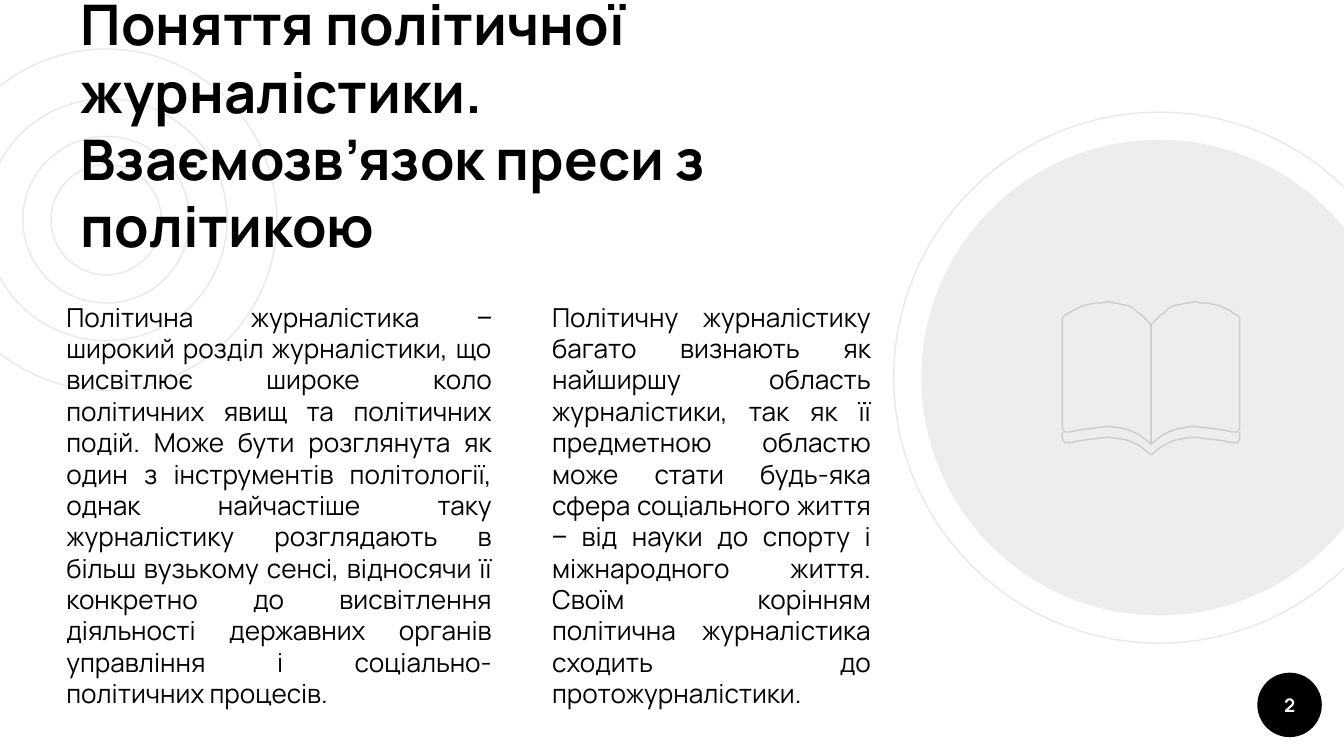
import pptx
import pptx.dml.color
import pptx.enum.shapes
import pptx.enum.text
import pptx.oxml.ns
import pptx.util
from lxml import etree

PX = 4572
FONT = "Manrope"
BLACK, WHITE, RING, BOOK = "000000", "FFFFFF", "E8E8E8", "CCCCCC"
ALIGN = pptx.enum.text.PP_ALIGN
ANCHOR = pptx.enum.text.MSO_ANCHOR

TITLE = "Поняття політичної журналістики. Взаємозв’язок преси з політикою"
COLUMNS = [
    ((802, 428, 514, 492),
     "Політичну журналістику багато визнають як найширшу область журналістики, "
     "так як її предметною областю може стати будь-яка сфера соціального життя "
     "‒ від науки до спорту і міжнародного життя. Своїм корінням політична "
     "журналістика сходить до протожурналістики."),
    ((79, 428, 673, 492),
     "Політична журналістика ‒ широкий розділ журналістики, що висвітлює широке "
     "коло політичних явищ та політичних подій. Може бути розглянута як один з "
     "інструментів політології, однак найчастіше таку журналістику розглядають в "
     "більш вузькому сенсі, відносячи її конкретно до висвітлення діяльності "
     "державних органів управління і соціально-політичних процесів."),
]

BOOK_STEP = 2
PAGE_FOOT = [(0, 106), (5, 102), (9, 99), (13, 97), (18, 95), (23, 94), (30, 93),
             (33, 93), (42, 94), (50, 95), (56, 96), (60, 97), (64, 97), (65, 96),
             (66, 94)]
PAGE_HEAD = [(66, 14), (66, 12), (64, 10), (62, 9), (59, 7), (55, 5), (51, 3),
             (46, 2), (42, 1), (37, 1), (33, 0), (27, 1), (22, 2), (17, 3), (13, 5),
             (10, 8), (7, 10), (3, 14), (1, 16), (0, 18)]
COVER_DROP = 8


def px(*lengths):
    return [pptx.util.Emu(length * PX) for length in lengths]


def color(code):
    return pptx.dml.color.RGBColor.from_string(code)


def style(shape, fill=None, line=None, opacity=100):
    shape.shadow.inherit = False
    if fill:
        shape.fill.solid()
        shape.fill.fore_color.rgb = color(fill)
        if opacity < 100:
            tone = shape.fill._xPr.find(".//" + pptx.oxml.ns.qn("a:srgbClr"))
            alpha = etree.SubElement(tone, pptx.oxml.ns.qn("a:alpha"))
            alpha.set("val", str(opacity * 1000))
    else:
        shape.fill.background()
    if line:
        shape.line.color.rgb = color(line)
        shape.line.width = pptx.util.Pt(0.75)
    else:
        shape.line.fill.background()


def add_circle(page, center_x, center_y, size, **look):
    box = px(center_x - size // 2, center_y - size // 2, size, size)
    circle = page.shapes.add_shape(pptx.enum.shapes.MSO_SHAPE.OVAL, *box)
    style(circle, **look)
    return circle


def write(shape, text, size, align, anchor, tone=BLACK, bold=False):
    frame = shape.text_frame
    frame.word_wrap = True
    frame.auto_size = pptx.enum.text.MSO_AUTO_SIZE.NONE
    frame.vertical_anchor = anchor
    (frame.margin_left, frame.margin_top,
     frame.margin_right, frame.margin_bottom) = px(20, 20, 20, 20)
    para = frame.paragraphs[0]
    para.alignment = align
    span = para.add_run()
    span.text = text
    span.font.name = FONT
    span.font.size = pptx.util.Pt(size)
    span.font.bold = bold
    span.font.color.rgb = color(tone)


def add_rings(page, box):
    left, top, width, height = box
    for size in (width, 248, 360, 164):
        add_circle(page, left + width // 2, top + height // 2, size, line=RING)


def add_badge(page, box):
    left, top, width, height = box
    badge = add_circle(page, left + width // 2, top + height // 2, width, fill=BLACK)
    write(badge, "2", 10, ALIGN.CENTER, ANCHOR.MIDDLE, WHITE, True)


def add_disc(page, box):
    left, top, width, height = box
    center = left + width // 2, top + height // 2
    add_circle(page, *center, width, line=RING)
    add_circle(page, *center, 708, fill=BLACK, opacity=7)


def add_title(page, box):
    title = page.shapes.title
    title.left, title.top, title.width, title.height = px(*box)
    write(title, TITLE, 30, ALIGN.LEFT, ANCHOR.BOTTOM, bold=True)
    page.shapes._spTree.append(title._element)


def add_column(page, box, text):
    column = page.shapes.add_textbox(*px(*box))
    write(column, text, 14, ALIGN.JUSTIFY, ANCHOR.TOP)


def add_book(page, box):
    left, top, width, height = box
    spine = left + width // 2
    cover = [(x, y + COVER_DROP) for x, y in PAGE_FOOT] + [(66, 97)]
    for points, closed in ((cover, False), (PAGE_FOOT + PAGE_HEAD, True)):
        for side in (-1, 1):
            outline = [(spine + side * x * BOOK_STEP, top + y * BOOK_STEP)
                       for x, y in points]
            builder = page.shapes.build_freeform(*outline[0], scale=PX)
            builder.add_line_segments(outline[1:], close=closed)
            style(builder.convert_to_shape(), line=BOOK)


def build_slide(deck):
    page = deck.slides.add_slide(deck.slide_layouts[5])
    page.background.fill.solid()
    page.background.fill.fore_color.rgb = color(WHITE)
    add_rings(page, (-96, 73, 508, 508))
    add_disc(page, (1330, 167, 790, 790))
    add_title(page, (100, 255, 1142, 150))
    for box, text in COLUMNS:
        add_column(page, box, text)
    add_badge(page, (1871, 1001, 96, 96))
    add_book(page, (1581, 449, 264, 228))


def main():
    deck = pptx.Presentation()
    deck.slide_width, deck.slide_height = px(2000, 1125)
    build_slide(deck)
    deck.save("out.pptx")


if __name__ == "__main__":
    main()
